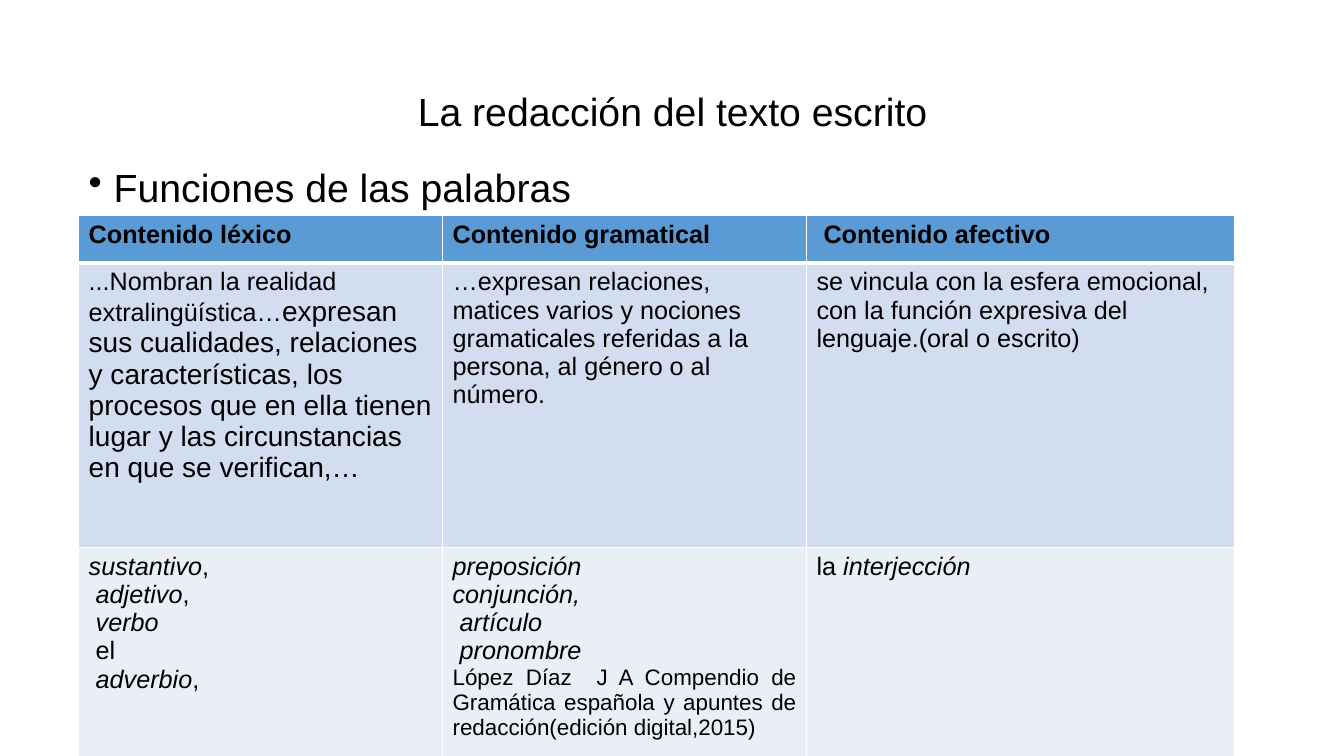
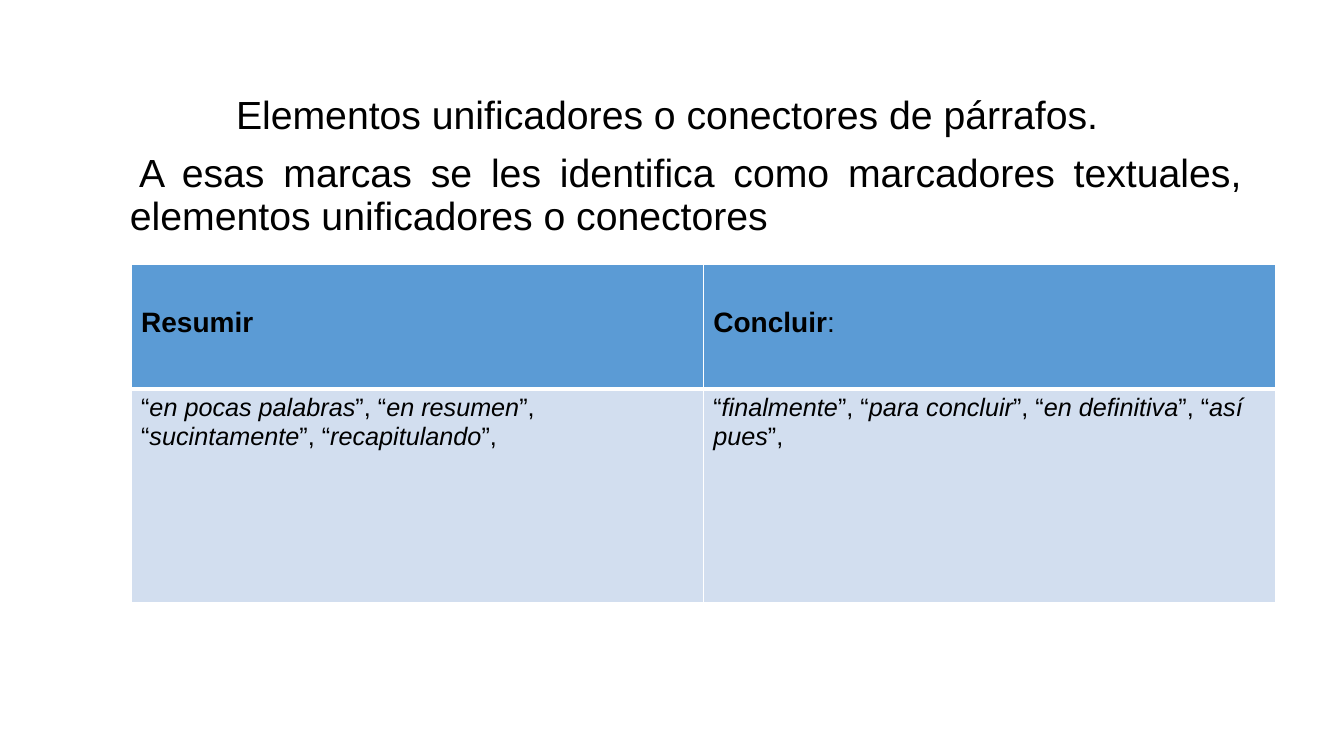
from dataclasses import dataclass

from lxml import etree
from pptx import Presentation
from pptx.dml.color import RGBColor
from pptx.enum.text import MSO_ANCHOR, PP_ALIGN
from pptx.oxml.ns import qn
from pptx.util import Emu, Inches, Pt

CENTER, JUSTIFY, LEFT = PP_ALIGN.CENTER, PP_ALIGN.JUSTIFY, PP_ALIGN.LEFT
MIDDLE = MSO_ANCHOR.MIDDLE

BLACK = RGBColor(0x00, 0x00, 0x00)
WHITE = RGBColor(0xFF, 0xFF, 0xFF)
HEADER_BLUE = RGBColor(0x5B, 0x9B, 0xD5)
BAND_BLUE = RGBColor(0xD2, 0xDE, 0xEF)
BAND_PALE = RGBColor(0xEA, 0xEF, 0xF7)
ROW_FILLS = (HEADER_BLUE, BAND_BLUE, BAND_PALE)

FONT = "Arial"
HEADING_SIZE = 28
CELL_SIZE = 18
THIN, THICK = 1, 3
SLIDE_WIDTH, SLIDE_HEIGHT = Inches(13.33), Inches(7.5)
TITLE_ONLY = 5


@dataclass(frozen=True)
class Frame:
    """Left, top, width and height as percentages of the slide."""
    left: float
    top: float
    width: float
    height: float

    def lengths(self) -> tuple[Emu, Emu, Emu, Emu]:
        return (share(SLIDE_WIDTH, self.left), share(SLIDE_HEIGHT, self.top),
                share(SLIDE_WIDTH, self.width), share(SLIDE_HEIGHT, self.height))


@dataclass(frozen=True)
class Span:
    text: str
    size: float = CELL_SIZE
    bold: bool = False
    italic: bool = False


@dataclass(frozen=True)
class Para:
    spans: tuple[Span, ...]
    align: PP_ALIGN = LEFT
    line_spacing: float = 1.0
    margin: float = 0
    indent: float = 0
    bullet: str = ""


@dataclass(frozen=True)
class Grid:
    """Column and row shares are percentages of the frame."""
    frame: Frame
    columns: tuple[float, ...]
    rows: tuple[float, ...]
    cells: tuple[tuple[tuple[Para, ...], ...], ...]
    header_top: float = 0.05


@dataclass(frozen=True)
class Page:
    title: Para
    body_frame: Frame
    body: Para
    grid: Grid


def share(length: int, percent: float) -> Emu:
    return Emu(round(length * percent / 100))


def header(text: str, size: float = CELL_SIZE) -> tuple[Para, ...]:
    return (Para(tuple(Span(part, size, bold=index % 2 == 1)
                       for index, part in enumerate(text.split("*")) if part)),)


def lines(*texts: str) -> tuple[Para, ...]:
    return tuple(Para(tuple(Span(part, italic=index % 2 == 1)
                            for index, part in enumerate(text.split("*")) if part))
                 for text in texts)


def heading(text: str, align: PP_ALIGN, line_spacing: float = 0.9,
            margin: float = 0, indent: float = 0, bullet: str = "") -> Para:
    return Para((Span(text, HEADING_SIZE),), align, line_spacing, margin, indent, bullet)


def write(text_frame, paras: tuple[Para, ...]) -> None:
    text_frame.word_wrap = True
    for index, para in enumerate(paras):
        paragraph = text_frame.paragraphs[0] if index == 0 else text_frame.add_paragraph()
        paragraph.alignment = para.align
        paragraph.line_spacing = para.line_spacing
        properties = paragraph._p.get_or_add_pPr()
        properties.set("marL", str(Inches(para.margin)))
        properties.set("indent", str(Inches(para.indent)))
        if para.bullet:
            etree.SubElement(properties, qn("a:buChar"), char=para.bullet)
        for span in para.spans:
            run = paragraph.add_run()
            run.text = span.text
            run.font.name = FONT
            run.font.size = Pt(span.size)
            run.font.bold = span.bold
            run.font.italic = span.italic
            run.font.color.rgb = BLACK


def draw_borders(cell, top: float, bottom: float) -> None:
    sides = {"a:lnL": THIN, "a:lnR": THIN, "a:lnT": top, "a:lnB": bottom}
    properties = cell._tc.get_or_add_tcPr()
    for index, (tag, width) in enumerate(sides.items()):
        line = etree.Element(qn(tag), w=str(Pt(width)))
        fill = etree.SubElement(line, qn("a:solidFill"))
        etree.SubElement(fill, qn("a:srgbClr"), val=str(WHITE))
        properties.insert(index, line)


def draw_grid(slide, grid: Grid) -> None:
    left, top, width, height = grid.frame.lengths()
    table = slide.shapes.add_table(len(grid.rows), len(grid.columns),
                                   left, top, width, height).table
    table.first_row = False
    table.horz_banding = False
    for column, percent in zip(table.columns, grid.columns):
        column.width = share(width, percent)
    for row, percent in zip(table.rows, grid.rows):
        row.height = share(height, percent)
    for row_index, row_cells in enumerate(grid.cells):
        for column_index, paras in enumerate(row_cells):
            cell = table.cell(row_index, column_index)
            cell.fill.solid()
            cell.fill.fore_color.rgb = ROW_FILLS[row_index]
            if row_index == 0:
                cell.margin_top = Inches(grid.header_top)
            draw_borders(cell, THICK if row_index == 1 else THIN,
                         THICK if row_index == 0 else THIN)
            write(cell.text_frame, paras)


def draw_page(deck, page: Page) -> None:
    slide = deck.slides.add_slide(deck.slide_layouts[TITLE_ONLY])
    title = slide.shapes.title
    title.left, title.top, title.width, title.height = TITLE_FRAME.lengths()
    title.text_frame.vertical_anchor = MIDDLE
    write(title.text_frame, (page.title,))
    body = slide.shapes.add_textbox(*page.body_frame.lengths())
    write(body.text_frame, (page.body,))
    draw_grid(slide, page.grid)


TITLE_FRAME = Frame(6.9, 5.33, 86.27, 19.33)

WORD_FUNCTIONS = Page(
    title=heading("La redacción del texto escrito", CENTER),
    body_frame=Frame(5.85, 21.6, 88.37, 63.47),
    body=heading("Funciones de las palabras", LEFT, margin=0.25, indent=-0.25, bullet="•"),
    grid=Grid(
        frame=Frame(5.85, 28.53, 86.05, 71.87),
        columns=(31.47, 31.47, 37.06),
        rows=(8.72, 52.32, 38.96),
        cells=(
            (header("*Contenido léxico*"), header("*Contenido gramatical*"),
             header(" *Contenido afectivo*")),
            ((Para((Span("...Nombran la realidad extralingüística…"),
                    Span("expresan sus cualidades, relaciones y características, los "
                         "procesos que en ella tienen lugar y las circunstancias en que "
                         "se verifican,…", 20))),),
             lines("…expresan relaciones, matices varios y nociones gramaticales "
                   "referidas a la persona, al género o al número."),
             lines("se vincula con la esfera emocional, con la función expresiva del "
                   "lenguaje.(oral o escrito)")),
            (lines("*sustantivo*,", " *adjetivo*,", " *verbo*", " el", " *adverbio*,"),
             lines("*preposición*", "*conjunción,*", " *artículo*", " *pronombre*")
             + (Para((Span("López Díaz  J A Compendio de Gramática española y apuntes de "
                           "redacción(edición digital,2015)", 16),), JUSTIFY),),
             lines("la *interjección*")),
        ),
    ),
)

CONNECTORS = Page(
    title=heading("Elementos unificadores o conectores de párrafos. ", CENTER, 1.0),
    body_frame=Frame(5.93, 19.73, 87.17, 70.27),
    body=heading("A esas marcas se les identifica como marcadores textuales, elementos "
                 "unificadores o conectores", JUSTIFY, margin=0.4, indent=0.09),
    grid=Grid(
        frame=Frame(9.75, 34.93, 85.15, 44.8),
        columns=(50, 50),
        rows=(36.9, 63.1),
        header_top=0.43,
        cells=(
            (header("*Resumir*", 20), header("*Concluir*:", 20)),
            (lines("“*en pocas palabras*”, “*en resumen*”, “*sucintamente*”, "
                   "“*recapitulando*”,"),
             lines("“*finalmente*”, “*para concluir*”, “*en definitiva*”, “*así pues*”,")),
        ),
    ),
)


def main() -> None:
    deck = Presentation()
    deck.slide_width, deck.slide_height = SLIDE_WIDTH, SLIDE_HEIGHT
    for page in (WORD_FUNCTIONS, CONNECTORS):
        draw_page(deck, page)
    deck.save("out.pptx")


if __name__ == "__main__":
    main()
